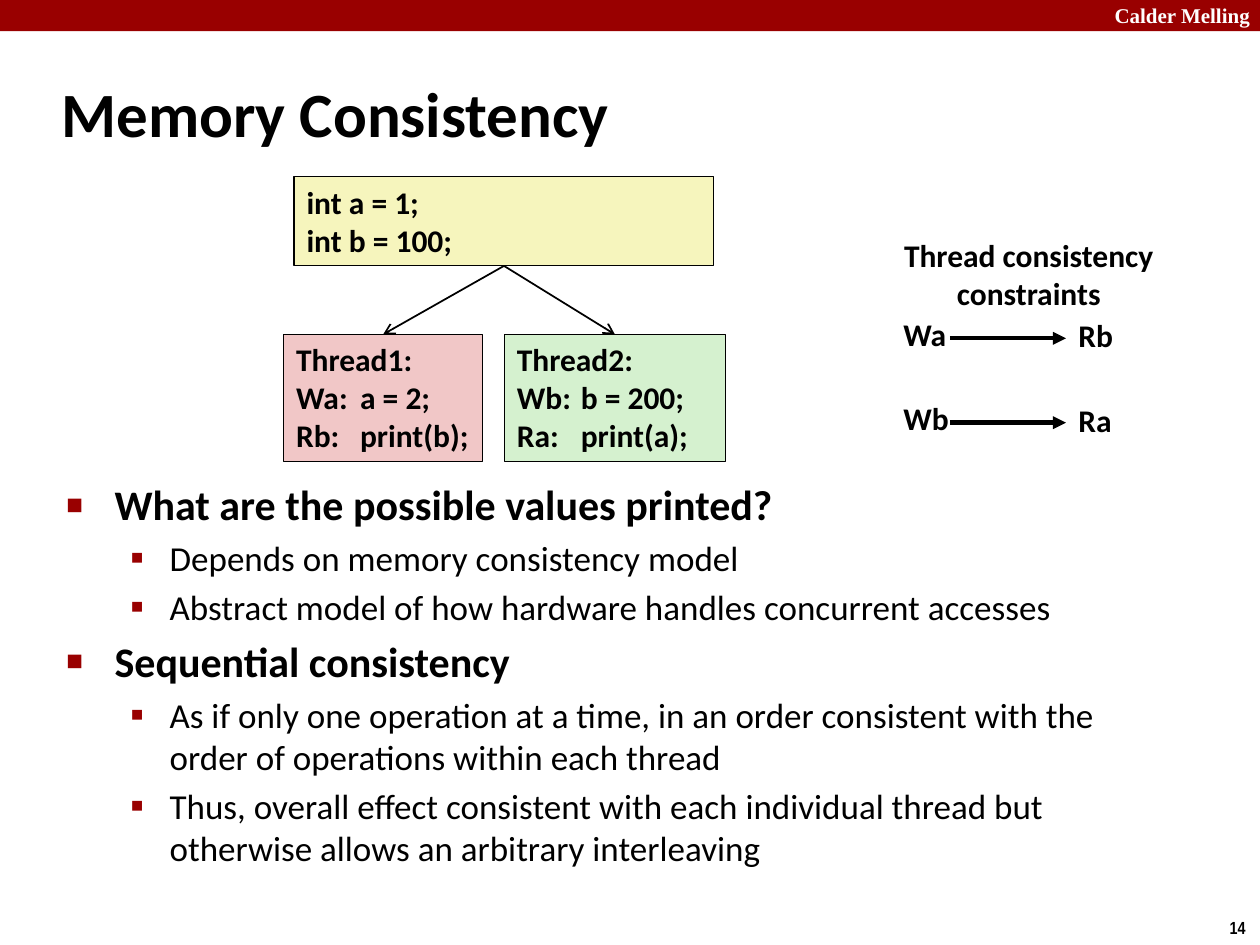
from dataclasses import dataclass

from lxml import etree
from pptx import Presentation
from pptx.dml.color import RGBColor
from pptx.enum import shapes, text
from pptx.oxml import ns
from pptx import util as u


@dataclass(frozen=True)
class Theme:
    red: str = "990000"
    black: str = "000000"
    white: str = "FFFFFF"
    yellow: str = "F6F5BD"
    pink: str = "F1C7C7"
    green: str = "D5F1CF"
    font: str = "Calibri"
    header_font: str = "Times New Roman"
    number_font: str = "Arial Narrow"
    title_size: int = 36
    topic_size: int = 24
    detail_size: int = 20
    code_size: int = 18
    header_size: int = 12
    number_size: int = 10


THEME = Theme()


@dataclass(frozen=True)
class Area:
    """Left, top, width and height in centimetres."""
    left: float
    top: float
    width: float
    height: float

    def lengths(self):
        return [u.Cm(v) for v in (self.left, self.top, self.width, self.height)]


@dataclass(frozen=True)
class CodeBox:
    area: Area
    fill: str
    lines: tuple[str, ...]


@dataclass(frozen=True)
class Level:
    size: int
    bold: bool
    margin: float
    hanging: float
    bullet: str
    bullet_percent: int


@dataclass(frozen=True)
class Constraint:
    before: str
    after: str
    top: float


TOPIC = Level(THEME.topic_size, True, 0.97, 0.97, "■", 42)
DETAIL = Level(THEME.detail_size, False, 2.08, 0.79, "▪", 110)

DECLARATIONS = CodeBox(Area(5.93, 3.56, 8.46, 1.8), THEME.yellow,
                       ("int a = 1;", "int b = 100;"))
THREADS = (
    CodeBox(Area(5.72, 6.74, 4.01, 2.57), THEME.pink,
            ("Thread1:", "Wa:\ta = 2;", "Rb: \tprint(b);")),
    CodeBox(Area(10.17, 6.74, 4.45, 2.57), THEME.green,
            ("Thread2:", "Wb:\tb = 200;", "Ra:\tprint(a);")),
)
CONSTRAINTS = (Constraint("Wa", "Rb", 6.22), Constraint("Wb", "Ra", 7.92))
BODY = (
    (TOPIC, "What are the possible values printed?"),
    (DETAIL, "Depends on memory consistency model"),
    (DETAIL, "Abstract model of how hardware handles concurrent accesses"),
    (TOPIC, "Sequential consistency"),
    (DETAIL, "As if only one operation at a time, in an order consistent "
             "with the order of operations within each thread"),
    (DETAIL, "Thus, overall effect consistent with each individual thread "
             "but otherwise allows an arbitrary interleaving"),
)


def add_xml(parent, tag: str, **attributes):
    return etree.SubElement(parent, ns.qn(tag), attributes)


def write(para, words: str, *, size=THEME.code_size, bold=True,
          font=THEME.font, color=THEME.black) -> None:
    span = para.add_run()
    span.text = words
    span.font.size = u.Pt(size)
    span.font.bold = bold
    span.font.name = font
    span.font.color.rgb = RGBColor.from_string(color)


def next_para(frame, index: int):
    return frame.add_paragraph() if index else frame.paragraphs[0]


def add_label(page, area: Area, *lines: str, wrap=False,
              anchor=text.MSO_ANCHOR.TOP, align=text.PP_ALIGN.LEFT, **style):
    frame = page.shapes.add_textbox(*area.lengths()).text_frame
    frame.word_wrap = wrap
    frame.vertical_anchor = anchor
    if not wrap:
        frame.auto_size = text.MSO_AUTO_SIZE.SHAPE_TO_FIT_TEXT
    for index, line in enumerate(lines):
        para = next_para(frame, index)
        para.alignment = align
        write(para, line, **style)


def add_rectangle(page, area: Area, fill: str):
    box = page.shapes.add_shape(shapes.MSO_SHAPE.RECTANGLE, *area.lengths())
    box.shadow.inherit = False
    box.fill.solid()
    box.fill.fore_color.rgb = RGBColor.from_string(fill)
    box.line.fill.background()
    return box


def add_code_box(page, code: CodeBox):
    box = add_rectangle(page, code.area, code.fill)
    box.line.color.rgb = RGBColor.from_string(THEME.black)
    box.line.width = u.Pt(0.75)
    frame = box.text_frame
    frame.word_wrap = True
    frame.vertical_anchor = text.MSO_ANCHOR.TOP
    for index, line in enumerate(code.lines):
        para = next_para(frame, index)
        para.alignment = text.PP_ALIGN.LEFT
        tabs = add_xml(para._p.get_or_add_pPr(), "a:tabLst")
        add_xml(tabs, "a:tab", pos=str(u.Cm(1.29)), algn="l")
        write(para, line)
    return box


def add_arrow(page, start: tuple[float, float], end: tuple[float, float],
              width: float, head: str):
    points = [u.Cm(value) for value in (*start, *end)]
    arrow = page.shapes.add_connector(shapes.MSO_CONNECTOR.STRAIGHT, *points)
    arrow.line.color.rgb = RGBColor.from_string(THEME.black)
    arrow.line.width = u.Pt(width)
    add_xml(arrow.line._get_or_add_ln(), "a:tailEnd", type=head)
    add_xml(arrow._element.spPr, "a:effectLst")
    return arrow


def add_body(page, area: Area) -> None:
    frame = page.shapes.add_textbox(*area.lengths()).text_frame
    frame.word_wrap = True
    for index, (level, words) in enumerate(BODY):
        para = next_para(frame, index)
        para.space_before = u.Pt(level.size * 0.2)
        properties = para._p.get_or_add_pPr()
        properties.set("marL", str(u.Cm(level.margin)))
        properties.set("indent", str(-u.Cm(level.hanging)))
        color = add_xml(properties, "a:buClr")
        add_xml(color, "a:srgbClr", val=THEME.red)
        add_xml(properties, "a:buSzPct", val=str(level.bullet_percent * 1000))
        add_xml(properties, "a:buFont", typeface=THEME.font)
        add_xml(properties, "a:buChar", char=level.bullet)
        write(para, words, size=level.size, bold=level.bold)


def main() -> None:
    deck = Presentation()
    deck.slide_width, deck.slide_height = u.Cm(25.4), u.Cm(19.05)
    page = deck.slides.add_slide(deck.slide_layouts[6])

    # Header bar and page number
    add_rectangle(page, Area(0, 0, 25.4, 0.63), THEME.red)
    add_label(page, Area(21.95, -0.08, 3.5, 0.76), "Calder Melling",
              align=text.PP_ALIGN.RIGHT, size=THEME.header_size,
              font=THEME.header_font, color=THEME.white)
    add_label(page, Area(24.54, 18.36, 0.86, 0.69), "14",
              size=THEME.number_size, font=THEME.number_font)

    # Title and bullets
    add_label(page, Area(0.99, 1.21, 21.08, 2.11), "Memory Consistency",
              wrap=True, anchor=text.MSO_ANCHOR.MIDDLE, size=THEME.title_size)
    add_body(page, Area(1.09, 9.53, 21.95, 8.08))

    # Shared declarations branching into two threads
    declarations = add_code_box(page, DECLARATIONS)
    for thread in THREADS:
        box = add_code_box(page, thread)
        branch = add_arrow(page, (0, 0), (1, 1), 1, "arrow")
        branch.begin_connect(declarations, 2)
        branch.end_connect(box, 0)

    # Ordering constraints
    add_label(page, Area(17.96, 4.63, 5.56, 1.8), "Thread consistency",
              "constraints", align=text.PP_ALIGN.CENTER)
    for rule in CONSTRAINTS:
        add_label(page, Area(17.96, rule.top, 1.42, 1.02), rule.before)
        add_label(page, Area(21.49, rule.top + 0.03, 1.2, 1.02), rule.after)
        height = rule.top + 0.6
        add_arrow(page, (19.15, height), (21.49, height), 2.5, "triangle")

    deck.save("out.pptx")


if __name__ == "__main__":
    main()
